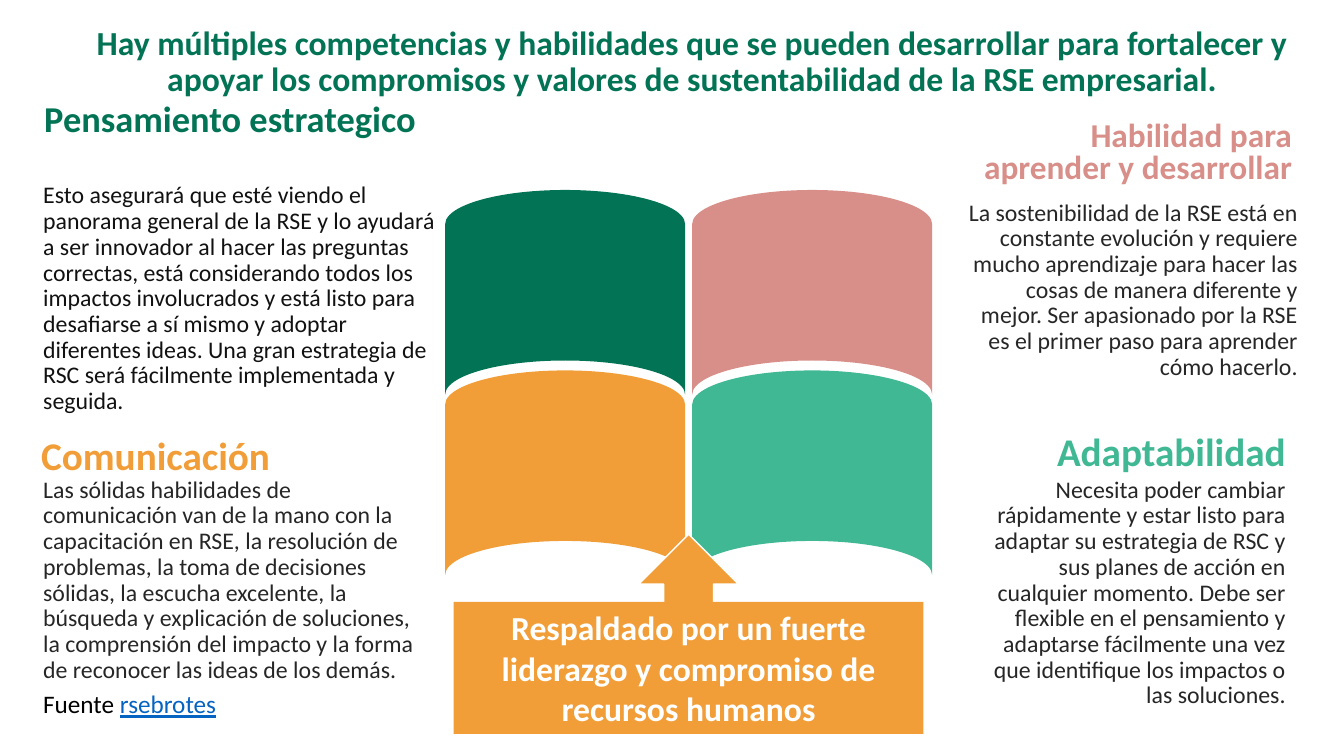
from dataclasses import dataclass

from pptx import Presentation
from pptx.dml.color import RGBColor
from pptx.enum.shapes import MSO_SHAPE
from pptx.enum.text import MSO_ANCHOR, MSO_AUTO_SIZE, PP_ALIGN
from pptx.util import Inches, Pt

RECTANGLE = MSO_SHAPE.RECTANGLE
CURVED_TILE = MSO_SHAPE.FLOWCHART_STORED_DATA
ARROW_CALLOUT = MSO_SHAPE.RIGHT_ARROW_CALLOUT
TOP, MIDDLE = MSO_ANCHOR.TOP, MSO_ANCHOR.MIDDLE
LEFT, CENTER, RIGHT = PP_ALIGN.LEFT, PP_ALIGN.CENTER, PP_ALIGN.RIGHT
NO_AUTO_SIZE = MSO_AUTO_SIZE.NONE


@dataclass(frozen=True)
class Theme:
    font: str = "Calibri"
    green: str = "027354"
    rose: str = "D98F89"
    orange: str = "F29E38"
    mint: str = "40B894"
    ink: str = "111111"
    gray: str = "262626"
    black: str = "000000"
    white: str = "FFFFFF"
    link: str = "0563C1"
    title: float = 24
    strategy: float = 26
    learning: float = 23.8
    heading: float = 28
    body: float = 17
    source: float = 18
    banner: float = 24


THEME = Theme()

TILE_COLORS = ((THEME.green, THEME.rose), (THEME.orange, THEME.mint))

HEADINGS = (
    ("Pensamiento estrategico", (0.34, 0.95, 3.89, 0.77), THEME.strategy, THEME.green, LEFT, 0.9),
    ("Comunicación", (0.31, 4.28, 2.94, 0.77), THEME.heading, THEME.orange, LEFT, 0.9),
    ("Habilidad para aprender y desarrollar", (9.56, 1.16, 3.35, 0.77),
     THEME.learning, THEME.rose, RIGHT, 0.8),
    ("Adaptabilidad", (9.91, 4.24, 2.94, 0.77), THEME.heading, THEME.mint, RIGHT, 0.9),
)

DESCRIPTIONS = (
    ("Esto asegurará que esté viendo el panorama general de la RSE y lo ayudará a ser "
     "innovador al hacer las preguntas correctas, está considerando todos los impactos "
     "involucrados y está listo para desafiarse a sí mismo y adoptar diferentes ideas. "
     "Una gran estrategia de RSC será fácilmente implementada y seguida.",
     (0.33, 1.77, 4.15, 0.77), THEME.ink, LEFT),
    ("Las sólidas habilidades de comunicación van de la mano con la capacitación en RSE, "
     "la resolución de problemas, la toma de decisiones sólidas, la escucha excelente, la "
     "búsqueda y explicación de soluciones, la comprensión del impacto y la forma de "
     "reconocer las ideas de los demás.",
     (0.33, 4.69, 3.9, 0.77), THEME.gray, LEFT),
    ("La sostenibilidad de la RSE está en constante evolución y requiere mucho aprendizaje "
     "para hacer las cosas de manera diferente y mejor. Ser apasionado por la RSE es el "
     "primer paso para aprender cómo hacerlo.",
     (9.5, 1.94, 3.47, 0.77), THEME.gray, RIGHT),
    ("Necesita poder cambiar rápidamente y estar listo para adaptar su estrategia de RSC y "
     "sus planes de acción en cualquier momento. Debe ser flexible en el pensamiento y "
     "adaptarse fácilmente una vez que identifique los impactos o las soluciones.",
     (9.74, 4.69, 3.11, 0.77), THEME.gray, RIGHT),
)


def apply_format(target, values):
    for name, value in values.items():
        setattr(target, name, value)


def place(box, bounds):
    names = ("left", "top", "width", "height")
    apply_format(box, {name: Inches(value) for name, value in zip(names, bounds)})


def add_span(para, text, size, color, bold=False, underline=False):
    span = para.add_run()
    span.text = text
    apply_format(span.font, {
        "name": THEME.font, "size": Pt(size), "bold": bold, "underline": underline,
    })
    span.font.color.rgb = RGBColor.from_string(color)


def prepare_para(box, align=LEFT, line_spacing=1.0, space_before=0, anchor=TOP):
    frame = box.text_frame
    apply_format(frame, {
        "word_wrap": True, "auto_size": NO_AUTO_SIZE, "vertical_anchor": anchor,
    })
    para = frame.paragraphs[0]
    apply_format(para, {
        "alignment": align, "line_spacing": line_spacing, "space_before": Pt(space_before),
    })
    return para


def add_text(page, text, bounds, size, color, align, line_spacing=0.9, bold=False):
    box = page.shapes.add_textbox(*map(Inches, bounds))
    para = prepare_para(box, align, line_spacing, 10)
    add_span(para, text, size, color, bold)


def add_block(page, kind, bounds, color, rotation=0, outline=None):
    block = page.shapes.add_shape(kind, *map(Inches, bounds))
    block.rotation = rotation
    block.shadow.inherit = False
    block.fill.solid()
    block.fill.fore_color.rgb = RGBColor.from_string(color)
    if outline:
        block.line.color.rgb = RGBColor.from_string(outline)
        block.line.width = Pt(1)
    else:
        block.line.fill.background()
    return block


def set_title(page):
    title = page.shapes.title
    place(title, (0.4, 0.21, 12.93, 0.83))
    para = prepare_para(title, CENTER, 0.9, 10)
    add_span(para, "Hay múltiples competencias y habilidades que se pueden desarrollar para "
             "fortalecer y apoyar los compromisos y valores de sustentabilidad de la RSE "
             "empresarial.", THEME.title, THEME.green, bold=True)


def add_tiles(page):
    for row, colors in enumerate(TILE_COLORS):
        for column, color in enumerate(colors):
            bounds = (4.59 + column * 2.45, 1.71 + row * 1.79, 2.03, 2.38)
            add_block(page, CURVED_TILE, bounds, color, rotation=90)


def add_source(page):
    box = page.shapes.add_textbox(*map(Inches, (0.33, 6.78, 3.3, 0.41)))
    para = prepare_para(box)
    add_span(para, "Fuente ", THEME.source, THEME.black)
    add_span(para, "rsebrotes", THEME.source, THEME.link, underline=True)


def add_banner(page):
    add_block(page, ARROW_CALLOUT, (5.84, 3.96, 1.98, 4.66), THEME.orange, 270, THEME.white)
    banner = add_block(page, RECTANGLE, (4.5, 5.97, 4.66, 1.31), THEME.orange)
    para = prepare_para(banner, CENTER, anchor=MIDDLE)
    add_span(para, "Respaldado por un fuerte liderazgo y compromiso de recursos humanos",
             THEME.banner, THEME.white, bold=True)


def main():
    deck = Presentation()
    deck.slide_width, deck.slide_height = Inches(13.33), Inches(7.5)
    page = deck.slides.add_slide(deck.slide_layouts[5])
    set_title(page)
    add_tiles(page)
    for text, bounds, size, color, align, line_spacing in HEADINGS:
        add_text(page, text, bounds, size, color, align, line_spacing, bold=True)
    for text, bounds, color, align in DESCRIPTIONS:
        add_text(page, text, bounds, THEME.body, color, align)
    add_source(page)
    add_banner(page)
    deck.save("out.pptx")


if __name__ == "__main__":
    main()
